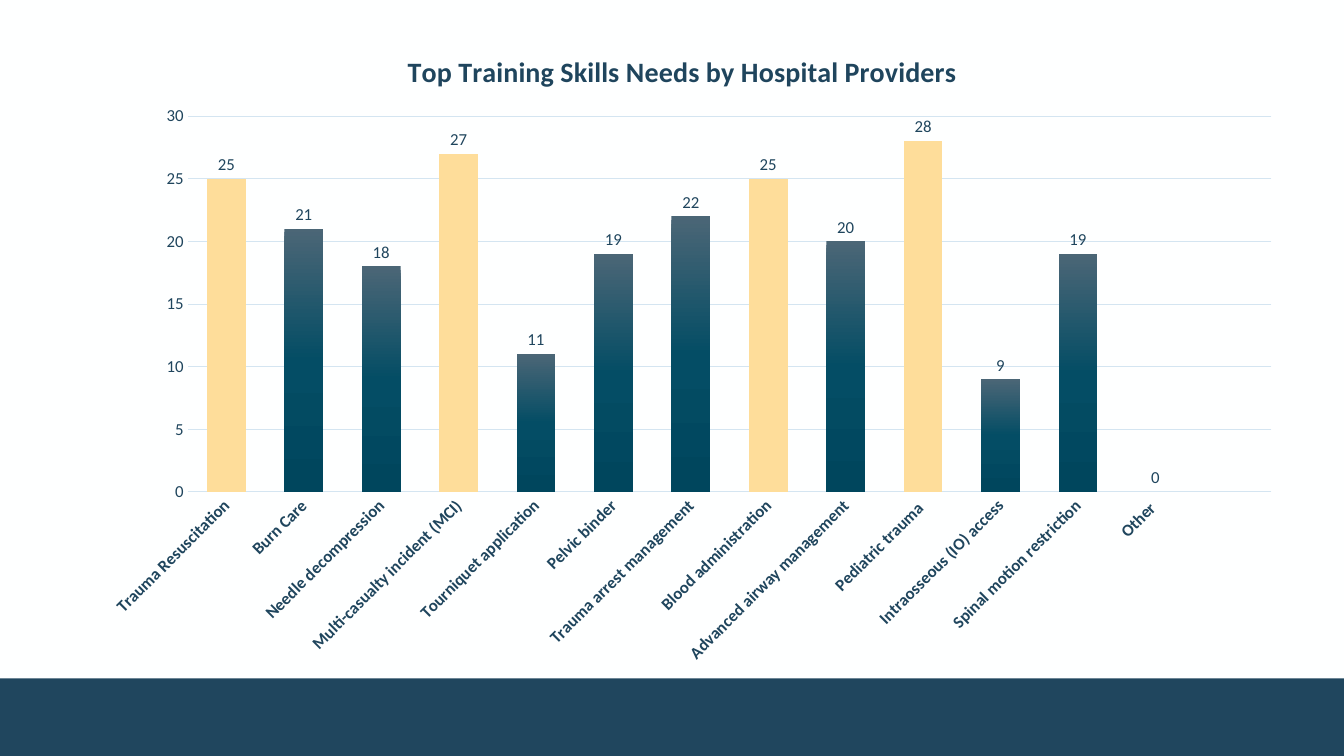
import pptx
import pptx.chart.data
import pptx.dml.color
import pptx.enum.chart
import pptx.enum.shapes
import pptx.oxml
import pptx.oxml.ns
import pptx.util

RGBColor = pptx.dml.color.RGBColor
PAPER = RGBColor(0xFE, 0xFF, 0xFF)
BAND = RGBColor(0x20, 0x46, 0x5E)
INK = RGBColor(0x1F, 0x45, 0x5D)
GRID = RGBColor(0xD4, 0xE5, 0xF1)
HIGHLIGHT = RGBColor(0xFE, 0xDD, 0x9A)
BAR_STOPS = {
    0: RGBColor(0x4B, 0x66, 0x76),
    50: RGBColor(0x04, 0x4D, 0x65),
    100: RGBColor(0x00, 0x46, 0x5D),
}

SKILLS = [
    ("Trauma Resuscitation", 25),
    ("Burn Care", 21),
    ("Needle decompression", 18),
    ("Multi-casualty incident (MCI)", 27),
    ("Tourniquet application", 11),
    ("Pelvic binder", 19),
    ("Trauma arrest management", 22),
    ("Blood administration", 25),
    ("Advanced airway management", 20),
    ("Pediatric trauma ", 28),
    ("Intraosseous (IO) access", 9),
    ("Spinal motion restriction", 19),
    ("Other ", 0),
    ("", None),
]
HIGHLIGHT_FROM = 25

WIDTH, HEIGHT = pptx.util.Inches(13.33), pptx.util.Inches(7.5)
CHART_BOX = [pptx.util.Inches(length) for length in (0.88, 0.2, 11.97, 6.52)]
BAND_TOP = pptx.util.Inches(6.73)
TITLE_SHARES = {"x": 0.26, "y": 0.04}
PLOT_SHARES = {"x": 0.082, "y": 0.146, "w": 0.898, "h": 0.572}


def style_font(font, size, bold=False):
    values = {"name": "Calibri", "size": pptx.util.Pt(size), "bold": bold}
    for name, value in values.items():
        setattr(font, name, value)
    font.color.rgb = INK


def style_line(line):
    line.color.rgb = GRID
    line.width = pptx.util.Pt(0.75)


def place(parent, shares, inner=False):
    """Fix a chart part at shares of the chart's size."""
    target = '<c:layoutTarget val="inner"/>' if inner else ""
    modes = "".join(f'<c:{key}Mode val="edge"/>' for key in shares if key in "xy")
    sizes = "".join(f'<c:{key} val="{share}"/>' for key, share in shares.items())
    layout = pptx.oxml.parse_xml(
        f'<c:layout {pptx.oxml.ns.nsdecls("c")}><c:manualLayout>'
        f"{target}{modes}{sizes}</c:manualLayout></c:layout>"
    )
    for old in parent.findall(pptx.oxml.ns.qn("c:layout")):
        parent.remove(old)
    text = parent.find(pptx.oxml.ns.qn("c:tx"))
    if text is None:
        parent.insert(0, layout)
    else:
        text.addnext(layout)


def fill_bars(series):
    stops = "".join(
        f'<a:gs pos="{share * 1000}"><a:srgbClr val="{color}"/></a:gs>'
        for share, color in BAR_STOPS.items()
    )
    gradient = pptx.oxml.parse_xml(
        f'<a:gradFill {pptx.oxml.ns.nsdecls("a")} rotWithShape="1">'
        f'<a:gsLst>{stops}</a:gsLst><a:lin ang="5400000" scaled="0"/></a:gradFill>'
    )
    series._element.get_or_add_spPr().insert(0, gradient)
    for index, (_, count) in enumerate(SKILLS):
        if count is not None and count >= HIGHLIGHT_FROM:
            fill = series.points[index].format.fill
            fill.solid()
            fill.fore_color.rgb = HIGHLIGHT


def style_axes(chart):
    no_ticks = pptx.enum.chart.XL_TICK_MARK.NONE
    for axis, bold in ((chart.category_axis, True), (chart.value_axis, False)):
        axis.major_tick_mark = axis.minor_tick_mark = no_ticks
        style_font(axis.tick_labels.font, 12, bold)
    skills, counts = chart.category_axis, chart.value_axis
    skills.has_major_gridlines = False
    style_line(skills.format.line)
    skills._element.txPr.bodyPr.set("rot", "-2700000")
    scale = {"minimum_scale": 0, "maximum_scale": 30, "major_unit": 5}
    for name, value in scale.items():
        setattr(counts, name, value)
    counts.format.line.fill.background()
    style_line(counts.major_gridlines.format.line)


def add_skills_chart(page, box):
    data = pptx.chart.data.CategoryChartData()
    data.categories = [skill for skill, _ in SKILLS]
    data.add_series("Series 1", [count for _, count in SKILLS])
    kind = pptx.enum.chart.XL_CHART_TYPE.COLUMN_CLUSTERED
    chart = page.shapes.add_chart(kind, *box, data).chart
    style_font(chart.font, 10)
    chart.has_legend = False
    chart.has_title = True
    para = chart.chart_title.text_frame.paragraphs[0]
    span = para.add_run()
    span.text = "Top Training Skills Needs by Hospital Providers"
    style_font(span.font, 20, True)
    chart.chart_title.include_in_layout = False
    place(chart.chart_title._element, TITLE_SHARES)
    style_axes(chart)

    plot = chart.plots[0]
    plot_values = {"gap_width": 100, "overlap": -24, "vary_by_categories": False}
    for name, value in plot_values.items():
        setattr(plot, name, value)
    series = plot.series[0]
    fill_bars(series)
    labels = series.data_labels
    labels.show_value = True
    labels.position = pptx.enum.chart.XL_LABEL_POSITION.OUTSIDE_END
    style_font(labels.font, 12)
    place(chart._chartSpace.chart.plotArea, PLOT_SHARES, inner=True)


def add_footer_band(page, box):
    band = page.shapes.add_shape(pptx.enum.shapes.MSO_SHAPE.RECTANGLE, *box)
    band.shadow.inherit = False
    band.fill.solid()
    band.fill.fore_color.rgb = BAND
    band.line.fill.background()


def main():
    deck = pptx.Presentation()
    deck.slide_width, deck.slide_height = WIDTH, HEIGHT
    page = deck.slides.add_slide(deck.slide_layouts[6])
    page.background.fill.solid()
    page.background.fill.fore_color.rgb = PAPER
    add_footer_band(page, (0, BAND_TOP, WIDTH, HEIGHT - BAND_TOP))
    add_skills_chart(page, CHART_BOX)
    deck.save("out.pptx")


if __name__ == "__main__":
    main()
